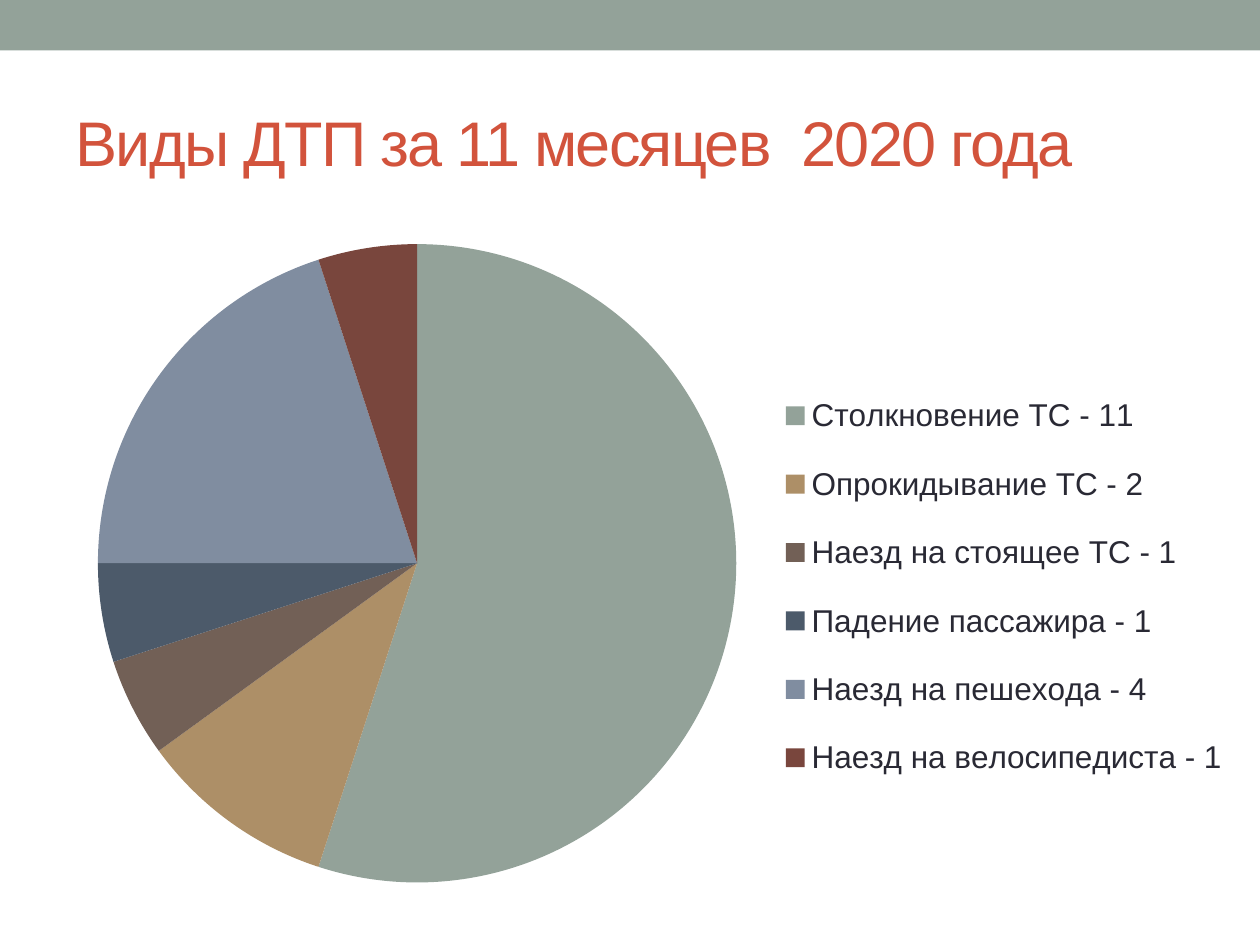
from pptx import Presentation
from pptx.chart.data import CategoryChartData as Data
from pptx.dml.color import RGBColor as Rgb
from pptx.enum.chart import XL_CHART_TYPE as Kind, XL_LEGEND_POSITION as Side
from pptx.enum.shapes import MSO_SHAPE as Form
from pptx.enum.text import MSO_ANCHOR as Anchor, PP_ALIGN as Align
from pptx.oxml import parse_xml
from pptx.oxml.ns import nsdecls
from pptx.util import Pt

HUES = {
    "sage": "93A299",
    "sand": "AD8F67",
    "brown": "726056",
    "slate": "4C5A6A",
    "blue": "808DA0",
    "rust": "79463D",
    "red": "D2533C",
    "ink": "292934",
}
TYPES = [
    ("Столкновение ТС - 11", 55, "sage"),
    ("Опрокидывание ТС - 2", 10, "sand"),
    ("Наезд на стоящее ТС - 1", 5, "brown"),
    ("Падение пассажира - 1", 5, "slate"),
    ("Наезд на пешехода - 4", 20, "blue"),
    ("Наезд на велосипедиста - 1", 5, "rust"),
]


class Deck:
    face = "Arial"

    def __init__(self, wide, high):
        self.show = Presentation()
        self.show.slide_width, self.show.slide_height = Pt(wide), Pt(high)
        self.slide = self.show.slides.add_slide(self.show.slide_layouts[5])

    def style(self, font, size, hue):
        font.name, font.size = self.face, Pt(size)
        font.color.rgb = Rgb.from_string(HUES[hue])

    def paint(self, fill, hue):
        fill.solid()
        fill.fore_color.rgb = Rgb.from_string(HUES[hue])

    def band(self, box, hue):
        bar = self.slide.shapes.add_shape(Form.RECTANGLE, *map(Pt, box))
        bar.shadow.inherit = False
        self.paint(bar.fill, hue)
        bar.line.fill.background()

    def title(self, box, text):
        head = self.slide.shapes.title
        head.left, head.top, head.width, head.height = map(Pt, box)
        frame = head.text_frame
        frame.text = text
        frame.word_wrap = True
        frame.vertical_anchor = Anchor.MIDDLE
        line = frame.paragraphs[0]
        line.alignment = Align.LEFT
        self.style(line.font, 36, "red")
        line.runs[0].font._element.set("spc", "-100")

    def layout(self, box, inner=False):
        target = '<c:layoutTarget val="inner"/>' if inner else ""
        modes = "".join(f'<c:{k}Mode val="edge"/>' for k in "xy")
        sizes = "".join(f'<c:{k} val="{v}"/>' for k, v in zip("xywh", box))
        return parse_xml(
            f'<c:layout {nsdecls("c")}><c:manualLayout>{target}{modes}{sizes}'
            "</c:manualLayout></c:layout>"
        )

    def pie(self, box, rows, plot, key):
        data = Data()
        data.categories = [name for name, _, _ in rows]
        data.add_series("Series 1", [share for _, share, _ in rows])
        chart = self.slide.shapes.add_chart(Kind.PIE, *map(Pt, box), data).chart
        chart.has_title = False
        self.style(chart.font, 18, "ink")
        chart.plots[0].vary_by_categories = True
        points = chart.plots[0].series[0].points
        for i, (_, _, hue) in enumerate(rows):
            self.paint(points[i].format.fill, hue)
            points[i].format.line.fill.background()
        chart.has_legend = True
        legend = chart.legend
        legend.position = Side.RIGHT
        legend.include_in_layout = False
        self.style(legend.font, 18, "ink")
        area = chart._chartSpace.chart.plotArea
        for node in area.xpath("c:layout") + legend._element.xpath("c:layout"):
            node.getparent().remove(node)
        area.insert(0, self.layout(plot, True))
        legend._element.xpath("c:legendPos")[0].addnext(self.layout(key))

    def save(self):
        self.show.save("out.pptx")


def main():
    deck = Deck(720, 540)
    deck.band((0, 0, 720, 28.8), "sage")
    deck.title((36, 42, 648, 77.5), "Виды ДТП за 11 месяцев  2020 года")
    deck.pie(
        (42.5, 128, 664, 384), TYPES,
        plot=(0.02, 0.03, 0.55, 0.95), key=(0.6, 0.21, 0.4, 0.66),
    )
    deck.save()


if __name__ == "__main__":
    main()
